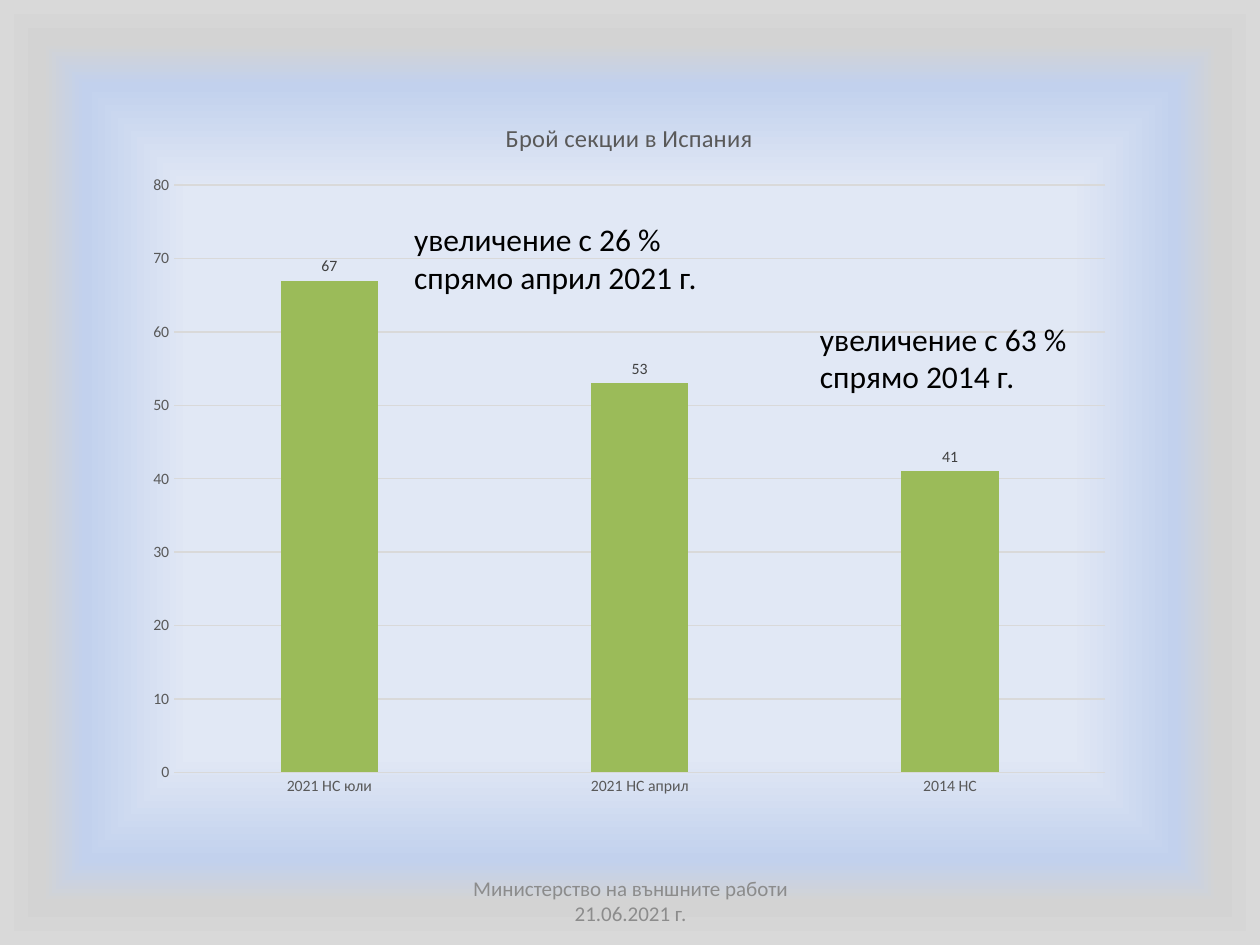
import pptx
import pptx.chart.data
import pptx.dml.color
import pptx.enum.chart
import pptx.enum.text
import pptx.oxml
import pptx.oxml.ns
import pptx.util


def colour(value):
    return pptx.dml.color.RGBColor.from_string(value)


class SlideBuilder:
    typeface = "Calibri"
    grid_colour = "D9D9D9"
    axis_colour = "595959"

    def __init__(self, deck):
        self.page = deck.slides.add_slide(deck.slide_layouts[6])

    def style_font(self, font, size, shade):
        font.name = self.typeface
        font.size = pptx.util.Pt(size)
        font.bold = False
        font.color.rgb = colour(shade)

    def style_line(self, line):
        line.color.rgb = colour(self.grid_colour)
        line.width = pptx.util.Pt(0.75)

    def add_background(self, stops):
        self.page.background.fill.gradient()
        gradient = self.page._element.xpath(".//p:bgPr/a:gradFill")[0]
        for child in list(gradient):
            gradient.remove(child)
        stop_xml = "".join(
            f'<a:gs pos="{position * 1000}"><a:srgbClr val="{shade}"/></a:gs>'
            for position, shade in stops
        )
        namespace = pptx.oxml.ns.nsdecls("a")
        for xml in (
            f"<a:gsLst {namespace}>{stop_xml}</a:gsLst>",
            f'<a:path {namespace} path="shape">'
            '<a:fillToRect l="50000" t="50000" r="50000" b="50000"/></a:path>',
        ):
            gradient.append(pptx.oxml.parse_xml(xml))

    def add_text(self, text, place, size, shade="000000"):
        box = self.page.shapes.add_textbox(*map(pptx.util.Cm, place))
        frame = box.text_frame
        frame.word_wrap = True
        frame.text = text
        self.style_font(frame.paragraphs[0].font, size, shade)
        return frame

    def add_note(self, text, left, top):
        frame = self.add_text(text, (left, top, 6.4, 1.8), 18)
        frame.auto_size = pptx.enum.text.MSO_AUTO_SIZE.SHAPE_TO_FIT_TEXT

    def add_footer(self, text, place):
        frame = self.add_text(text, place, 12, "8C8C8C")
        frame.vertical_anchor = pptx.enum.text.MSO_ANCHOR.MIDDLE
        frame.paragraphs[0].alignment = pptx.enum.text.PP_ALIGN.CENTER

    def add_columns(self, title, values, place, shade):
        data = pptx.chart.data.CategoryChartData()
        data.categories = list(values)
        data.add_series(title, list(values.values()))
        chart = self.page.shapes.add_chart(
            pptx.enum.chart.XL_CHART_TYPE.COLUMN_CLUSTERED,
            *map(pptx.util.Cm, place),
            data,
        ).chart
        self.style_font(chart.font, 10, "000000")
        chart.has_legend = False
        chart.has_title = True
        chart.chart_title.include_in_layout = False
        heading = chart.chart_title.text_frame
        heading.text = title
        self.style_font(heading.paragraphs[0].font, 14, self.axis_colour)

        for axis in (chart.category_axis, chart.value_axis):
            axis.major_tick_mark = pptx.enum.chart.XL_TICK_MARK.NONE
            axis.minor_tick_mark = pptx.enum.chart.XL_TICK_MARK.NONE
            self.style_font(axis.tick_labels.font, 9, self.axis_colour)
        self.style_line(chart.category_axis.format.line)
        chart.value_axis.format.line.fill.background()
        self.style_line(chart.value_axis.major_gridlines.format.line)

        plot = chart.plots[0]
        plot.gap_width = 219
        plot.overlap = -27
        plot.vary_by_categories = False
        series = plot.series[0]
        series.format.fill.solid()
        series.format.fill.fore_color.rgb = colour(shade)
        labels = series.data_labels
        labels.show_value = True
        labels.position = pptx.enum.chart.XL_LABEL_POSITION.OUTSIDE_END
        self.style_font(labels.font, 9, "404040")


def main():
    deck = pptx.Presentation()
    deck.slide_width = pptx.util.Cm(25.4)
    deck.slide_height = pptx.util.Cm(19.05)
    builder = SlideBuilder(deck)
    builder.add_background(
        [(60, "E1E8F5"), (82, "C2D1ED"), (91, "D3D3D3"), (100, "D9D9D9")]
    )
    builder.add_footer(
        "Министерство на външните работи 21.06.2021 г.", (8.69, 17.65, 8.05, 1.02)
    )
    builder.add_columns(
        "Брой секции в Испания",
        {"2021 НС юли": 67, "2021 НС април": 53, "2014 НС": 41},
        (2.69, 1.93, 19.99, 14.4),
        "9BBB59",
    )
    builder.add_note("увеличение с 26 % спрямо април 2021 г.", 8.1, 4.32)
    builder.add_note("увеличение с 63 % спрямо 2014 г.", 16.28, 6.32)
    deck.save("out.pptx")


if __name__ == "__main__":
    main()
